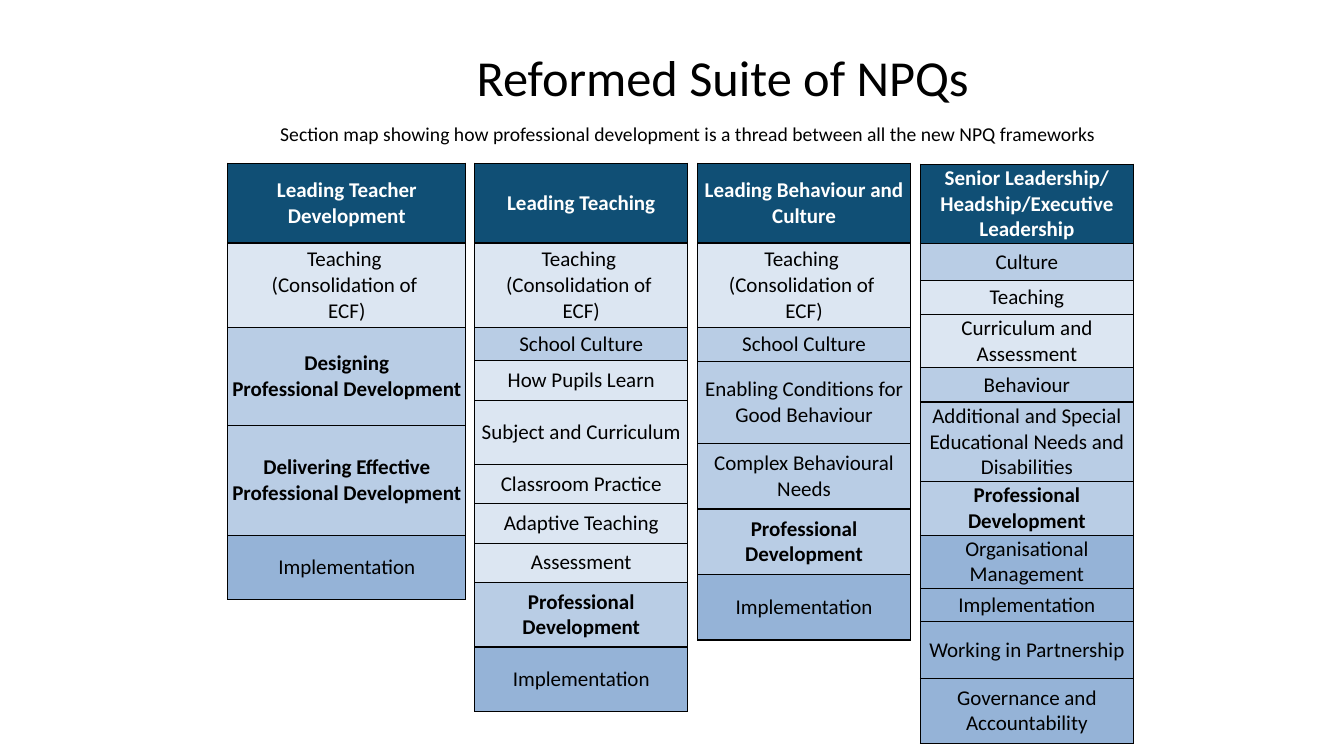
"""Build a slide mapping the sections of the reformed NPQ frameworks."""
import pptx
import pptx.dml.color
import pptx.enum.text
import pptx.oxml
import pptx.oxml.ns
import pptx.util
from pptx.util import Inches

TITLE = "Reformed Suite of NPQs"
SUBTITLE = "Section map showing how professional development is a thread between all the new NPQ frameworks"

FILLS = {"header": "104F75", "light": "DCE6F2", "middle": "B9CDE5",
         "thread": "B9CDE5", "dark": "95B3D7"}
BOLD_KINDS = ("header", "thread")
BORDER = "000000"
TEACHING = ("Teaching \v(Consolidation of \vECF)", "light", 0.84)
THREAD = "Professional Development"

FRAMEWORKS = [
    {"left": 2.26, "top": 1.62, "width": 2.36, "sections": [
        ("Leading Teacher Development", "header", 0.79),
        TEACHING,
        ("Designing\nProfessional Development", "thread", 0.97),
        ("Delivering Effective Professional Development", "thread", 1.09),
        ("Implementation", "dark", 0.64),
    ]},
    {"left": 4.71, "top": 1.62, "width": 2.11, "sections": [
        ("Leading Teaching", "header", 0.79),
        TEACHING,
        ("School Culture", "middle", 0.33),
        ("How Pupils Learn", "light", 0.39),
        ("Subject and Curriculum", "light", 0.64),
        ("Classroom Practice", "light", 0.39),
        ("Adaptive Teaching", "light", 0.39),
        ("Assessment", "light", 0.39),
        (THREAD, "thread", 0.64),
        ("Implementation", "dark", 0.64),
    ]},
    {"left": 6.92, "top": 1.62, "width": 2.11, "sections": [
        ("Leading Behaviour and Culture", "header", 0.79),
        TEACHING,
        ("School Culture", "middle", 0.34),
        ("Enabling Conditions for Good Behaviour", "middle", 0.81),
        ("Complex Behavioural Needs", "middle", 0.65),
        (THREAD, "thread", 0.65),
        ("Implementation", "dark", 0.65),
    ]},
    {"left": 9.13, "top": 1.63, "width": 2.11, "sections": [
        ("Senior Leadership/ Headship/Executive Leadership", "header", 0.79),
        ("Culture", "middle", 0.36),
        ("Teaching", "light", 0.34),
        ("Curriculum and Assessment", "light", 0.53),
        ("Behaviour", "middle", 0.34),
        ("Additional and Special Educational Needs and Disabilities", "middle", 0.79),
        (THREAD, "thread", 0.53),
        ("Organisational Management", "dark", 0.53),
        ("Implementation", "dark", 0.33),
        ("Working in Partnership", "dark", 0.56),
        ("Governance and Accountability", "dark", 0.65),
    ]},
]


def color(value):
    return pptx.dml.color.RGBColor.from_string(value)


def write(text_frame, text, size=15, bold=False, ink="000000"):
    text_frame.text = text
    text_frame.word_wrap = True
    for paragraph in text_frame.paragraphs:
        paragraph.alignment = pptx.enum.text.PP_ALIGN.CENTER
        for run in paragraph.runs:
            run.font.name = "Calibri"
            run.font.size = pptx.util.Pt(size)
            run.font.bold = bold
            run.font.color.rgb = color(ink)


def add_borders(cell):
    properties = cell._tc.get_or_add_tcPr()
    for side in ("lnL", "lnR", "lnT", "lnB"):
        properties.append(pptx.oxml.parse_xml(
            f'<a:{side} {pptx.oxml.ns.nsdecls("a")} w="12700"><a:solidFill>'
            f'<a:srgbClr val="{BORDER}"/></a:solidFill></a:{side}>'))


def add_framework(slide, left, top, width, sections):
    height = sum(section[2] for section in sections)
    shape = slide.shapes.add_table(len(sections), 1, Inches(left), Inches(top),
                                   Inches(width), Inches(height))
    table = shape.table
    table.first_row = table.horz_banding = False
    for index, (text, kind, row_height) in enumerate(sections):
        table.rows[index].height = Inches(row_height)
        cell = table.cell(index, 0)
        write(cell.text_frame, text, bold=kind in BOLD_KINDS,
              ink="FFFFFF" if kind == "header" else "000000")
        cell.vertical_anchor = pptx.enum.text.MSO_ANCHOR.MIDDLE
        cell.margin_left = cell.margin_right = Inches(0.01)
        cell.margin_top = cell.margin_bottom = Inches(0.01)
        add_borders(cell)
        cell.fill.solid()
        cell.fill.fore_color.rgb = color(FILLS[kind])


def main():
    presentation = pptx.Presentation()
    presentation.slide_width = Inches(13.33)
    presentation.slide_height = Inches(7.5)
    slide = presentation.slides.add_slide(presentation.slide_layouts[5])

    title = slide.shapes.title
    title.left, title.top = Inches(1.17), Inches(0.13)
    title.width, title.height = Inches(12), Inches(1.25)
    write(title.text_frame, TITLE, size=36)
    title.text_frame.vertical_anchor = pptx.enum.text.MSO_ANCHOR.MIDDLE

    subtitle = slide.shapes.add_textbox(Inches(2.16), Inches(1.16), Inches(9.33), Inches(0.34))
    write(subtitle.text_frame, SUBTITLE, size=14)

    for framework in FRAMEWORKS:
        add_framework(slide, **framework)
    presentation.save("out.pptx")


if __name__ == "__main__":
    main()
